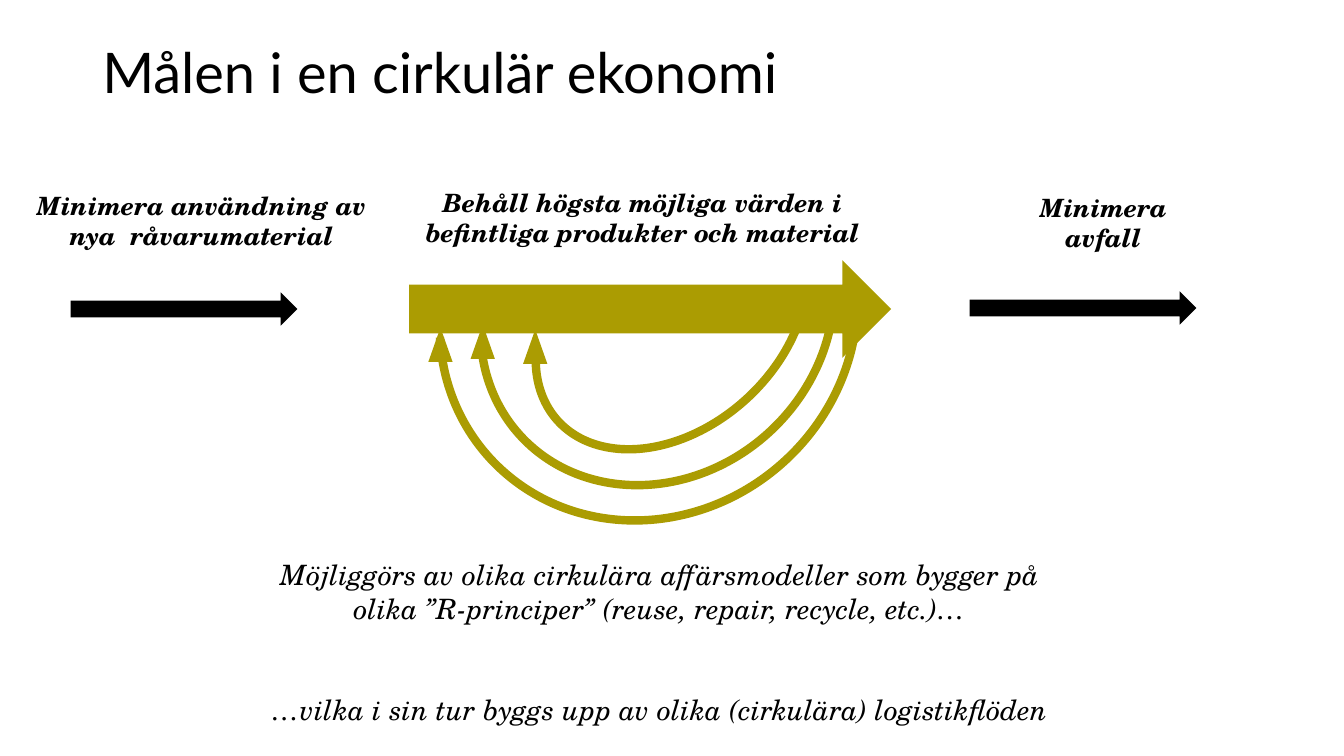
import pptx
import pptx.util
import pptx.dml.color
import pptx.enum.shapes
import pptx.enum.text

Pt = pptx.util.Pt
Shape = pptx.enum.shapes.MSO_SHAPE
Align = pptx.enum.text.PP_ALIGN

BLACK = "000000"
OLIVE = "AB9C02"


def color(hex_string):
    return pptx.dml.color.RGBColor.from_string(hex_string)


class GoalsPage:
    heading_font = "Lato"
    body_font = "TeX Gyre Schola"

    def __init__(self, deck):
        self.page = deck.slides.add_slide(deck.slide_layouts[6])

    def text(self, left, top, width, height, lines, size, font=body_font,
             align=Align.CENTER, bold=False, italic=True, gap=0, spacing=1.0):
        """Add a text box with one paragraph per line, gap points apart."""
        box = self.page.shapes.add_textbox(Pt(left), Pt(top), Pt(width), Pt(height))
        frame = box.text_frame
        frame.word_wrap = True
        frame.text = "\n".join(lines)
        for index, para in enumerate(frame.paragraphs):
            para.alignment = align
            para.line_spacing = spacing
            para.space_before = Pt(gap if index else 0)
            for span in para.runs:
                span.font.name = font
                span.font.size = Pt(size)
                span.font.bold = bold
                span.font.italic = italic
                span.font.color.rgb = color(BLACK)

    def shape(self, kind, left, top, width, height, fill):
        item = self.page.shapes.add_shape(kind, Pt(left), Pt(top), Pt(width), Pt(height))
        item.shadow.inherit = False
        item.fill.solid()
        item.fill.fore_color.rgb = color(fill)
        item.line.fill.background()

    def loop(self, left, top, width, height, start, end):
        """Add a return loop: an open arc turned to hang below the flow arrow."""
        arc = self.page.shapes.add_shape(Shape.ARC, Pt(left), Pt(top), Pt(width), Pt(height))
        arc.shadow.inherit = False
        arc.rotation = 138
        arc.adjustments[0] = start
        arc.adjustments[1] = end
        arc.fill.background()
        arc.line.color.rgb = color(OLIVE)
        arc.line.width = Pt(6)


def main():
    deck = pptx.Presentation()
    deck.slide_width = Pt(960)
    deck.slide_height = Pt(540)
    goals = GoalsPage(deck)

    goals.text(66, 28.8, 828, 104.4, ["Målen i en cirkulär ekonomi"], 40,
               font=goals.heading_font, align=Align.LEFT, italic=False, spacing=0.9)

    for loop in [
        (370.1, 148.3, 218.9, 157.7, 136.02, 16.33),
        (337, 103.7, 265, 236.2, 134.43, 18.38),
        (309.6, 79.9, 307.4, 287.3, 133.27, 21.19),
    ]:
        goals.loop(*loop)

    for left, top, width, label in [
        (283.7, 130.3, 350.6, "Behåll högsta möjliga värden i befintliga produkter och material"),
        (707, 133.9, 162, "Minimera avfall"),
        (15.8, 132.5, 256.3, "Minimera användning av nya  råvarumaterial"),
    ]:
        goals.text(left, top, width, 51, [label], 18, bold=True)

    goals.text(181.4, 394.6, 579.6, 128.2, [
        "Möjliggörs av olika cirkulära affärsmodeller som bygger på "
        "olika ”R-principer” (reuse, repair, recycle, etc.)…",
        "…vilka i sin tur byggs upp av olika (cirkulära) logistikflöden",
    ], 20, gap=48.5)

    for left, top, width, height, fill in [
        (50.4, 208.8, 162, 23.8, BLACK),
        (692.6, 208.1, 162, 23.8, BLACK),
        (292.3, 185.8, 344.2, 69.8, OLIVE),
    ]:
        goals.shape(Shape.RIGHT_ARROW, left, top, width, height, fill)

    for left, top in [(373.7, 235.4), (306, 234), (336.2, 231.8)]:
        goals.shape(Shape.ISOSCELES_TRIANGLE, left, top, 17.3, 24.5, OLIVE)

    deck.save("out.pptx")


if __name__ == "__main__":
    main()
